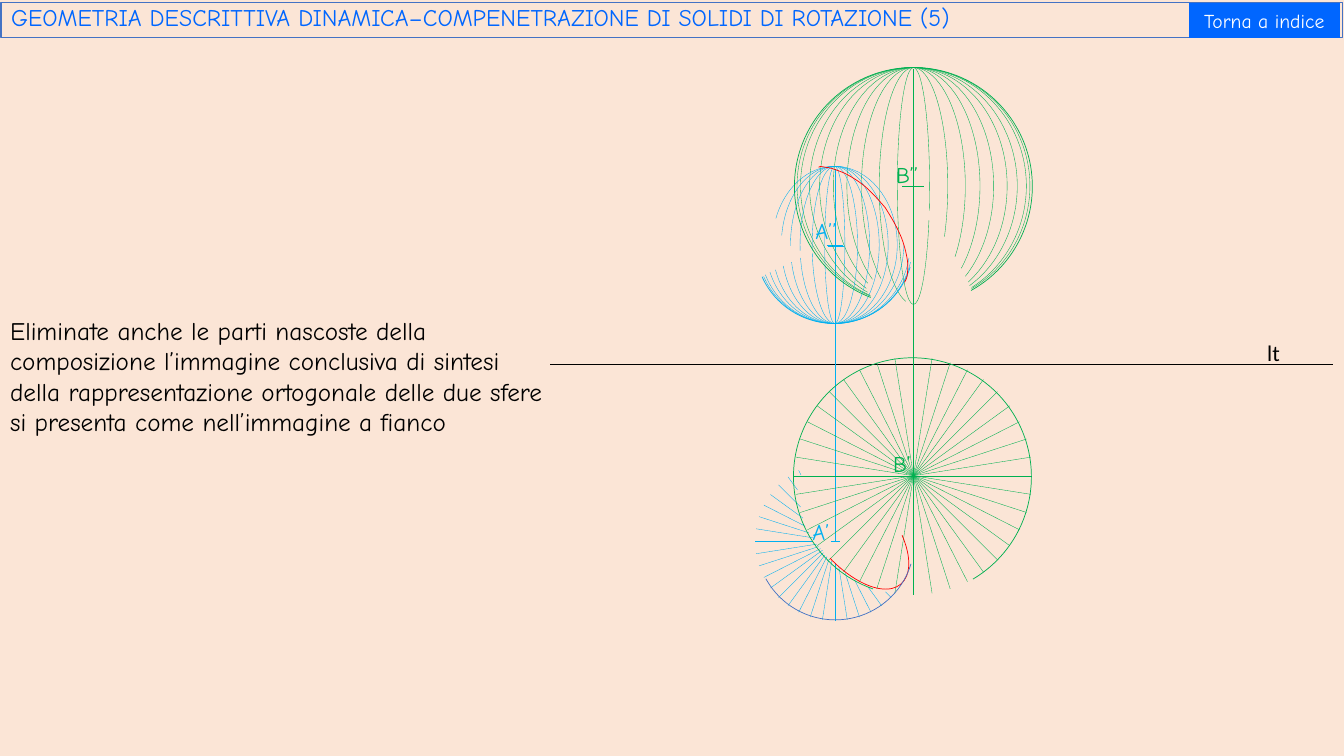
from dataclasses import dataclass
from math import cos, radians, sin

from lxml.etree import SubElement
from pptx import Presentation
from pptx.dml.color import RGBColor
from pptx.enum.shapes import MSO_CONNECTOR as Connector, MSO_SHAPE as Shape
from pptx.enum.text import MSO_ANCHOR as Anchor, MSO_AUTO_SIZE as AutoSize, PP_ALIGN as Align
from pptx.oxml.ns import qn
from pptx.util import Emu, Pt


@dataclass(frozen=True)
class Theme:
    background: str = "FBE5D6"
    blue: str = "0066FF"
    frame: str = "4472C4"
    green: str = "00B050"
    cyan: str = "00B0F0"
    red: str = "FF0000"
    black: str = "000000"
    white: str = "FFFFFF"
    font: str = "Comic Neue"
    ground_font: str = "Calibri"
    title_size: float = 17
    body_size: float = 18
    label_size: float = 16
    button_size: float = 14
    thin: float = 0.25
    outline: float = 0.5
    border: float = 0.75


THEME = Theme()
EMU_PER_PX = 9144
SLIDE_SIZE = (1333, 750)
RAY_STEP = 9

TITLE = "GEOMETRIA DESCRITTIVA DINAMICA–COMPENETRAZIONE DI SOLIDI DI ROTAZIONE (5)"
BODY = ("Eliminate anche le parti nascoste della composizione l’immagine conclusiva di sintesi "
        "della rappresentazione ortogonale delle due sfere si presenta come nell’immagine a fianco")
BUTTON = "Torna a indice"
TITLE_BOX = (1, 2, 1331, 35)
BODY_BOX = (0, 308, 549, 131)
BUTTON_BOX = (1179, 3, 150, 35)

LABELS = [
    ("lt", (1247, 332, 48, 37), THEME.ground_font, THEME.black),
    ("A’’", (799, 211, 53, 37), THEME.font, THEME.cyan),
    ("A’", (796, 509, 53, 37), THEME.font, THEME.cyan),
    ("B’’", (879, 155, 53, 37), THEME.font, THEME.green),
    ("B’", (876, 442, 53, 37), THEME.font, THEME.green),
]

STRAIGHT_LINES = [
    ((546, 361), (1322, 361), THEME.black),
    ((906, 185), (906, 472), THEME.green),
    ((900, 472), (913, 472), THEME.green),
    ((906, 174), (906, 195), THEME.green),
    ((895, 185), (916, 185), THEME.green),
    ((906, 68), (906, 303), THEME.green),
    ((828, 241), (828, 537), THEME.cyan),
    ((821, 244), (837, 244), THEME.cyan),
    ((820, 243), (836, 243), THEME.cyan),
    ((828, 236), (828, 251), THEME.cyan),
    ((828, 168), (828, 322), THEME.cyan),
    ((824, 537), (833, 537), THEME.cyan),
]

B_PLAN_CENTER, B_PLAN_RADIUS = (906, 472), 118
A_PLAN_CENTER, A_PLAN_RADIUS = (828, 537), 79
A_FIRST_RAY = -5
A_INNER_RADII = [71, 56, 43, 33, 26, 22, 20, 19, 17, 17, 16, 15,
                 16, 17, 18, 22, 22, 27, 33, 39, 48, 63, 74]

B_MERIDIANS = [
    (32, 65.81, 57.3), (68, 93.84, 58.66), (103, 109.22, 59.53),
    (132, 113.71, 59.87), (159, 115.1, 60.14), (186, 114.69, 60.3),
    (206, 113.37, 60.63), (224, 111.62, 60.17), (231, 111.06, 60.56),
]
A_MERIDIANS = [
    (20, 53.75, 160.81), (20, 163.55, 54), (45, 53.75, 160.25), (45, 166.01, 54.14),
    (69, 170.76, 159.28), (88, 178.74, 158.15), (106, 190.04, 157.89),
    (124, 204.19, 157.26), (137, 0.16, 157.08), (149, 9.91, 156.73), (154, 12.92, 156.02),
]
MERIDIAN_SETS = [
    (906, 67, 235, B_MERIDIANS, THEME.green),
    (828, 165, 156, A_MERIDIANS, THEME.cyan),
]
OUTLINE_ARCS = [
    ((808, 448, 75, 149), (49.85, 165.55), 320, THEME.red),
    ((749, 164, 157, 157), (16.6, 155.85), 0, THEME.cyan),
    ((750, 458, 157, 157), (16.98, 151.33), 0, THEME.frame),
    ((787, 355, 236, 236), (109.34, 59.43), 0, THEME.green),
    ((788, 67, 236, 236), (111.02, 61), 0, THEME.green),
]

SECTION_START = (812, 166)
SECTION_CURVES = [
    ((813, 165), (814, 165), (819, 166)),
    ((823, 166), (831, 169), (838, 172)),
    ((844, 175), (852, 180), (858, 185)),
    ((865, 191), (872, 199), (878, 206)),
    ((883, 214), (888, 222), (892, 231)),
    ((896, 239), (899, 251), (900, 258)),
    ((901, 265), (900, 269), (900, 273)),
    ((899, 277), (898, 279), (897, 280)),
]
CURVE_STEPS = 6


def px(*lengths):
    return [Emu(round(length * EMU_PER_PX)) for length in lengths]


def color(value):
    return RGBColor.from_string(value)


def set_line(shape, line_color, width):
    shape.line.color.rgb = color(line_color)
    shape.line.width = Pt(width)


def place(shape, box):
    shape.left, shape.top, shape.width, shape.height = px(*box)


def write(shape, text, size, text_color, font=THEME.font, align=Align.LEFT, anchor=Anchor.TOP):
    frame = shape.text_frame
    frame.text = text
    frame.word_wrap = True
    frame.auto_size = AutoSize.NONE
    frame.vertical_anchor = anchor
    paragraph = frame.paragraphs[0]
    paragraph.alignment = align
    paragraph.space_before = Pt(0)
    run_font = paragraph.runs[0].font
    run_font.name, run_font.size = font, Pt(size)
    run_font.color.rgb = color(text_color)
    return paragraph


def add_line(slide, start, end, line_color):
    connector = slide.shapes.add_connector(Connector.STRAIGHT, *px(*start, *end))
    set_line(connector, line_color, THEME.thin)
    SubElement(connector._element.spPr, qn("a:effectLst"))


def add_arc(slide, box, angles, line_color, width, rotation=0):
    arc = slide.shapes.add_shape(Shape.ARC, *px(*box))
    for index, angle in enumerate(angles):
        arc.adjustments[index] = angle * 0.6
    arc.rotation = rotation
    arc.fill.background()
    arc.shadow.inherit = False
    set_line(arc, line_color, width)


def polar(center, radius, step):
    angle = radians(step * RAY_STEP)
    return center[0] - radius * sin(angle), center[1] + radius * cos(angle)


def add_rays(slide):
    for step in range(180 // RAY_STEP):
        add_line(slide, polar(B_PLAN_CENTER, B_PLAN_RADIUS, step),
                 polar(B_PLAN_CENTER, -B_PLAN_RADIUS, step), THEME.green)
    for step, inner in enumerate(A_INNER_RADII, A_FIRST_RAY):
        add_line(slide, polar(A_PLAN_CENTER, inner, step),
                 polar(A_PLAN_CENTER, A_PLAN_RADIUS, step), THEME.cyan)


def curve_points():
    start = SECTION_START
    for first, second, end in SECTION_CURVES:
        for step in range(1, CURVE_STEPS + 1):
            t = step / CURVE_STEPS
            u = 1 - t
            yield px(*(u**3 * a + 3 * u * u * t * b + 3 * u * t * t * c + t**3 * d
                       for a, b, c, d in zip(start, first, second, end)))
        start = end


def add_section(slide):
    builder = slide.shapes.build_freeform(*px(*SECTION_START))
    builder.add_line_segments(list(curve_points()), close=False)
    section = builder.convert_to_shape()
    section.fill.background()
    section.shadow.inherit = False
    set_line(section, THEME.red, THEME.outline)


def add_texts(slide):
    title, body = slide.placeholders
    place(title, TITLE_BOX)
    set_line(title, THEME.frame, THEME.border)
    write(title, TITLE, THEME.title_size, THEME.blue, anchor=Anchor.MIDDLE).line_spacing = 0.8
    place(body, BODY_BOX)
    properties = write(body, BODY, THEME.body_size, THEME.black)._p.get_or_add_pPr()
    properties.set("marL", "0")
    properties.set("indent", "0")
    SubElement(properties, qn("a:buNone"))
    for text, box, font, text_color in LABELS:
        write(slide.shapes.add_textbox(*px(*box)), text, THEME.label_size, text_color, font)
    button = slide.shapes.add_shape(Shape.ACTION_BUTTON_CUSTOM, *px(*BUTTON_BOX))
    button.shadow.inherit = False
    button.fill.solid()
    button.fill.fore_color.rgb = color(THEME.blue)
    button.line.fill.background()
    write(button, BUTTON, THEME.button_size, THEME.white, align=Align.CENTER, anchor=Anchor.MIDDLE)


def main():
    presentation = Presentation()
    presentation.slide_width, presentation.slide_height = px(*SLIDE_SIZE)
    slide = presentation.slides.add_slide(presentation.slide_layouts[1])
    slide.background.fill.solid()
    slide.background.fill.fore_color.rgb = color(THEME.background)
    for start, end, line_color in STRAIGHT_LINES:
        add_line(slide, start, end, line_color)
    add_rays(slide)
    for center, top, height, meridians, line_color in MERIDIAN_SETS:
        for width, *angles in meridians:
            add_arc(slide, (center - width / 2, top, width, height), angles, line_color, THEME.thin)
    for box, angles, rotation, line_color in OUTLINE_ARCS:
        add_arc(slide, box, angles, line_color, THEME.outline, rotation)
    add_section(slide)
    add_texts(slide)
    presentation.save("out.pptx")


if __name__ == "__main__":
    main()
